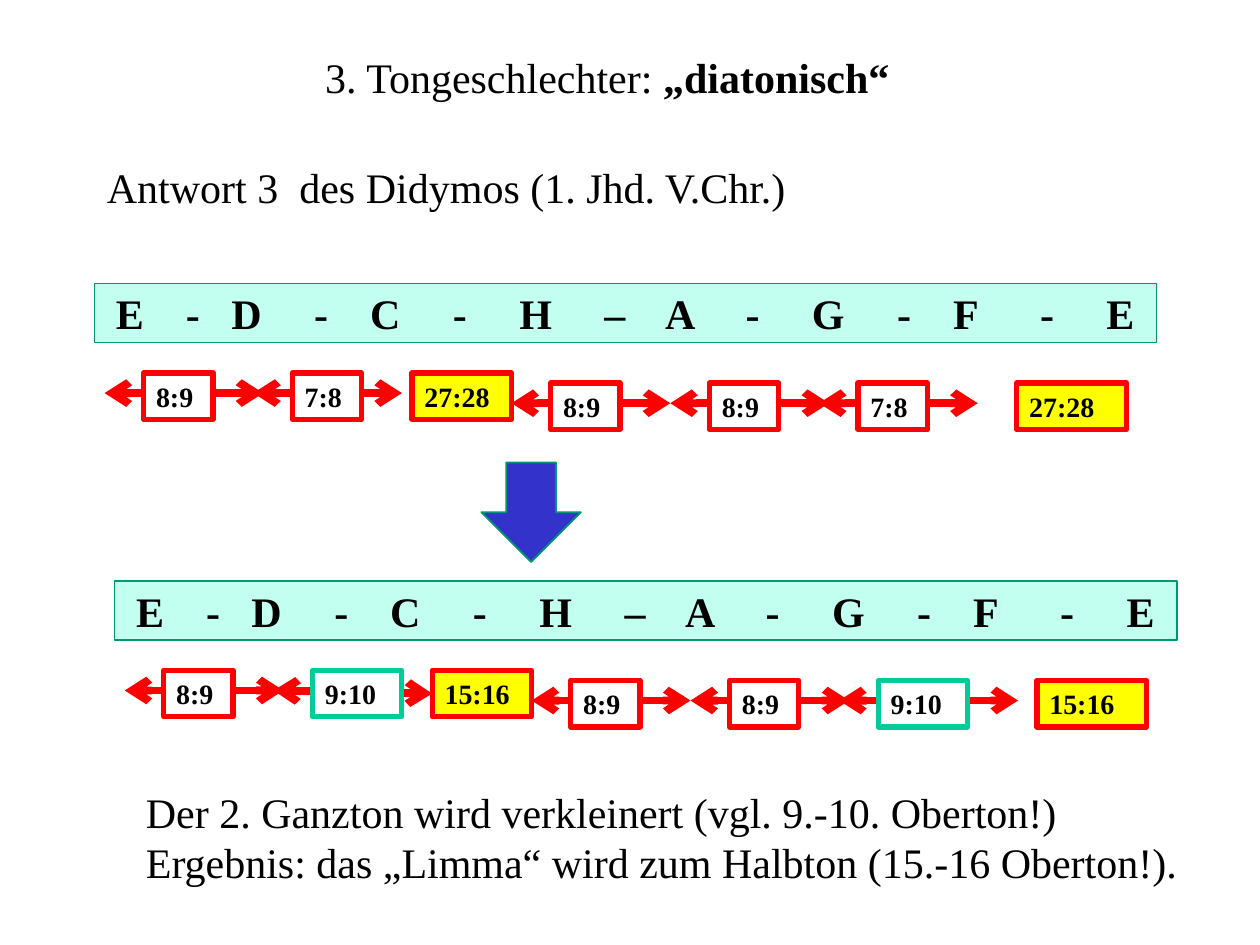
from lxml.etree import SubElement
from pptx import Presentation
from pptx.dml.color import RGBColor
from pptx.enum.shapes import MSO_CONNECTOR, MSO_SHAPE
from pptx.enum.text import MSO_ANCHOR, MSO_AUTO_SIZE, PP_ALIGN
from pptx.oxml.ns import qn
from pptx.util import Inches, Pt

FONT = "Times New Roman"
COLORS = {
    "text": "000000", "scale": "C2FFF0", "outline": "009771", "red": "FF0000",
    "white": "FFFFFF", "yellow": "FFFF00", "green": "00CC99", "blue": "3333CC",
}

TITLE = [("3. Tongeschlechter: ", False), ("„diatonisch“", True)]
ANSWER = ["Antwort 3  des Didymos (1. Jhd. V.Chr.)"]
CONCLUSION = [
    "Der 2. Ganzton wird verkleinert (vgl. 9.-10. Oberton!)",
    "Ergebnis: das „Limma“ wird zum Halbton (15.-16 Oberton!).",
]
NOTES = "E    -   D     -    C     -     H     –    A     -     G     -    F      -     E"

# Interval boxes: offset from the scale's left edge and top edge
BOX_OFFSETS = [(0.39, 0.71), (1.57, 0.71), (2.52, 0.71),
               (3.62, 0.79), (4.88, 0.79), (6.06, 0.79), (7.32, 0.79)]
BOX_HEIGHT = 0.37
ARROW_LEAD = 0.31  # the arrow starts this far left of its box
ARROW_DROP = 0.16

# Interval: ratio, box width, fill, line, arrow length
# (0: no arrow, "join": the arrow ends at the next box)
TONE = ("8:9", 0.55, "white", "red", 1.26)
SCALES = [
    (0.75, 2.25, [
        TONE, ("7:8", 0.55, "white", "red", 1.18), ("27:28", 0.79, "yellow", "red", 0),
        TONE, TONE, ("7:8", 0.55, "white", "red", 1.26), ("27:28", 0.87, "yellow", "red", 0),
    ]),
    (0.91, 4.61, [
        TONE, ("9:10", 0.71, "white", "green", "join"), ("15:16", 0.79, "yellow", "red", 0),
        TONE, TONE, ("9:10", 0.71, "white", "green", 1.42), ("15:16", 0.87, "yellow", "red", 0),
    ]),
]


def color(name):
    return RGBColor.from_string(COLORS[name])


def set_font(paragraph, size, bold=False):
    paragraph.font.name = FONT
    paragraph.font.size = Pt(size)
    paragraph.font.bold = bold
    paragraph.font.color.rgb = color("text")


def add_text(slide, box, lines, wrap):
    frame = slide.shapes.add_textbox(*map(Inches, box)).text_frame
    frame.word_wrap = wrap
    frame.text = "\n".join(lines)
    for paragraph in frame.paragraphs:
        set_font(paragraph, 24)


def add_block(slide, kind, box, fill, line, line_width, text="", size=16,
              align=PP_ALIGN.LEFT, anchor=MSO_ANCHOR.TOP):
    shape = slide.shapes.add_shape(kind, *map(Inches, box))
    shape.shadow.inherit = False
    shape.fill.solid()
    shape.fill.fore_color.rgb = color(fill)
    shape.line.color.rgb = color(line)
    shape.line.width = Pt(line_width)
    if text:
        frame = shape.text_frame
        frame.vertical_anchor = anchor
        frame.text = text
        frame.paragraphs[0].alignment = align
        set_font(frame.paragraphs[0], size, bold=True)
    return shape


def add_arrow(slide, left, right, y):
    connector = slide.shapes.add_connector(
        MSO_CONNECTOR.STRAIGHT, Inches(left), Inches(y), Inches(right), Inches(y))
    connector.line.color.rgb = color("red")
    connector.line.width = Pt(4.5)
    line = connector.line._get_or_add_ln()
    for end in ("a:headEnd", "a:tailEnd"):
        SubElement(line, qn(end), type="arrow")
    SubElement(connector._element.spPr, qn("a:effectLst"))
    return connector


def add_scale(slide, left, top, intervals):
    add_block(slide, MSO_SHAPE.RECTANGLE, (left, top, 8.43, 0.47), "scale", "outline", 1,
              NOTES, 24, PP_ALIGN.CENTER, MSO_ANCHOR.MIDDLE)
    open_arrow = None
    for (dx, dy), (ratio, width, fill, line, length) in zip(BOX_OFFSETS, intervals):
        x, y = left + dx, top + dy
        arrow = None
        if length:
            start = x - ARROW_LEAD
            end = x + width if length == "join" else start + length
            arrow = add_arrow(slide, start, end, y + ARROW_DROP)
        box = add_block(slide, MSO_SHAPE.RECTANGLE, (x, y, width, BOX_HEIGHT),
                        fill, line, 3, ratio)
        if open_arrow is not None:
            open_arrow.end_connect(box, 1)
        open_arrow = arrow if length == "join" else None


def main():
    presentation = Presentation()
    presentation.slide_width, presentation.slide_height = Inches(10), Inches(7.5)
    slide = presentation.slides.add_slide(presentation.slide_layouts[5])

    # Title
    title = slide.shapes.title
    title.left, title.top, title.width, title.height = map(Inches, (2.48, 0.36, 4.72, 0.5))
    frame = title.text_frame
    frame.word_wrap = False
    frame.auto_size = MSO_AUTO_SIZE.NONE
    frame.vertical_anchor = MSO_ANCHOR.TOP
    paragraph = frame.paragraphs[0]
    paragraph.alignment = PP_ALIGN.LEFT
    set_font(paragraph, 24)
    for text, bold in TITLE:
        run = paragraph.add_run()
        run.text = text
        run.font.bold = bold

    # Answer, both scales with the arrow between them, conclusion
    add_text(slide, (0.75, 1.23, 8.66, 1.72), ANSWER, wrap=True)
    for left, top, intervals in SCALES:
        add_scale(slide, left, top, intervals)
    add_block(slide, MSO_SHAPE.DOWN_ARROW, (3.82, 3.67, 0.79, 0.79), "blue", "outline", 1)
    add_text(slide, (1.06, 6.19, 8.46, 0.91), CONCLUSION, wrap=False)

    presentation.save("out.pptx")


if __name__ == "__main__":
    main()
